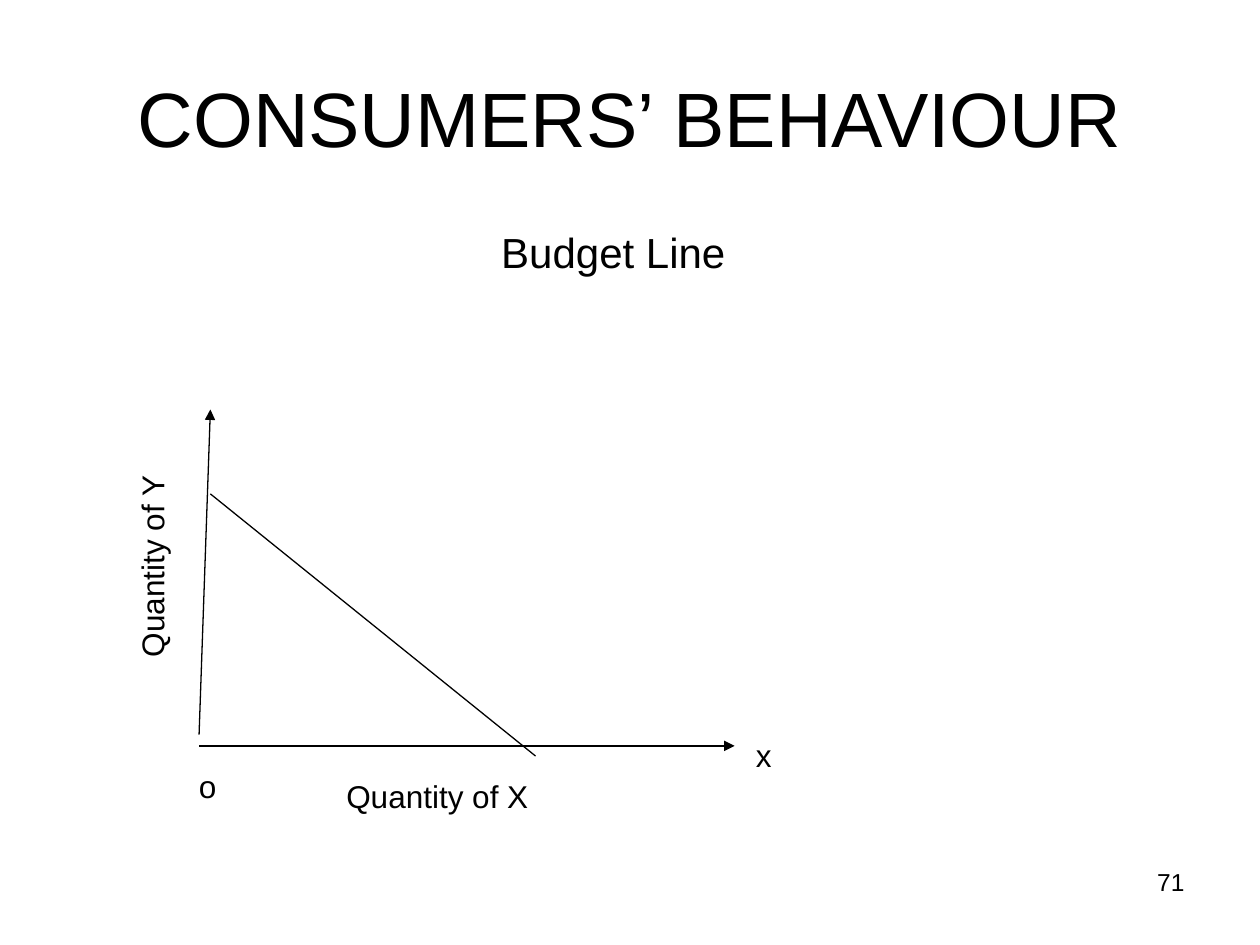
from dataclasses import dataclass

from lxml.etree import SubElement
from pptx import Presentation
from pptx.dml.color import RGBColor
from pptx.enum.shapes import MSO_CONNECTOR as Connector
from pptx.enum.text import MSO_ANCHOR as Anchor, MSO_AUTO_SIZE as AutoSize, PP_ALIGN as Align
from pptx.oxml.ns import qn
from pptx.util import Inches, Pt


@dataclass(frozen=True)
class Theme:
    """Colours, font and type sizes of the deck."""
    ink: RGBColor = RGBColor(0, 0, 0)
    paper: RGBColor = RGBColor(255, 255, 255)
    font: str = "Arial"
    title: int = 44
    body: int = 24
    label: int = 18
    number: int = 14
    line: float = 0.75


THEME = Theme()


def write(shape, text, size, align=Align.LEFT, wrap=True):
    """Put one styled paragraph into a shape and return it."""
    frame = shape.text_frame
    frame.text = text
    frame.word_wrap = wrap
    frame.auto_size = AutoSize.NONE
    para = frame.paragraphs[0]
    para.alignment = align
    for span in para.runs:
        span.font.name = THEME.font
        span.font.size = Pt(size)
        span.font.color.rgb = THEME.ink
    return para


def add_text(page, box, text, size, align=Align.LEFT, wrap=True):
    """Add a text box at the given box in inches."""
    shape = page.shapes.add_textbox(*map(Inches, box))
    write(shape, text, size, align, wrap)
    return shape


def add_line(page, start, end, arrow=False):
    """Draw a thin line, with an arrowhead at its end if asked."""
    line = page.shapes.add_connector(Connector.STRAIGHT, *map(Inches, (*start, *end)))
    line.line.color.rgb = THEME.ink
    line.line.width = Pt(THEME.line)
    if arrow:
        SubElement(line.line._get_or_add_ln(), qn("a:tailEnd"), type="triangle")
    SubElement(line._element.spPr, qn("a:effectLst"))


def add_title(page, box, text):
    """Move and format the title placeholder."""
    title = page.shapes.title
    title.left, title.top, title.width, title.height = map(Inches, box)
    title.text_frame.vertical_anchor = Anchor.MIDDLE
    write(title, text, THEME.title, Align.CENTER)


def add_subject(page, box, text):
    """Add the indented subject line of the slide."""
    subject = add_text(page, box, text, THEME.body)
    para = subject.text_frame.paragraphs[0]
    para.space_before = Pt(3)
    para._p.get_or_add_pPr().set("marL", str(Inches(3.38)))


def add_budget_graph(page, box):
    """Draw the axes, the budget line and their labels inside the box."""
    left, top, width, height = box
    right, bottom = left + width, top + height
    axis_top = left + 0.09
    add_line(page, (left, bottom - 0.09), (axis_top, top), arrow=True)
    add_line(page, (axis_top, top + 0.67), (left + 2.67, bottom + 0.08))
    add_line(page, (left, bottom), (right, bottom), arrow=True)
    labels = (
        ("Quantity of X", left + 1.07, bottom + 0.2, 1.65, 0),
        ("Quantity of Y", left - 1.2, top + 1.04, 1.65, 270),
        ("x", right + 0.07, bottom - 0.13, 0.33, 0),
        ("o", left - 0.1, bottom + 0.12, 0.34, 0),
    )
    for text, x, y, label_width, angle in labels:
        label = add_text(page, (x, y, label_width, 0.4), text, THEME.label, wrap=False)
        label.rotation = angle


def main():
    """Build and save the slide."""
    deck = Presentation()
    deck.slide_width, deck.slide_height = Inches(10), Inches(7.5)
    page = deck.slides.add_slide(deck.slide_layouts[5])
    page.background.fill.solid()
    page.background.fill.fore_color.rgb = THEME.paper
    add_title(page, (0.5, 0.3, 9, 1.25), "CONSUMERS’ BEHAVIOUR")
    add_subject(page, (0.5, 1.75, 9, 4.95), "Budget Line")
    add_budget_graph(page, (1.58, 3.25, 4.25, 2.67))
    add_text(page, (7.17, 6.83, 2.33, 0.52), "71", THEME.number, Align.RIGHT)
    deck.save("out.pptx")


if __name__ == "__main__":
    main()
